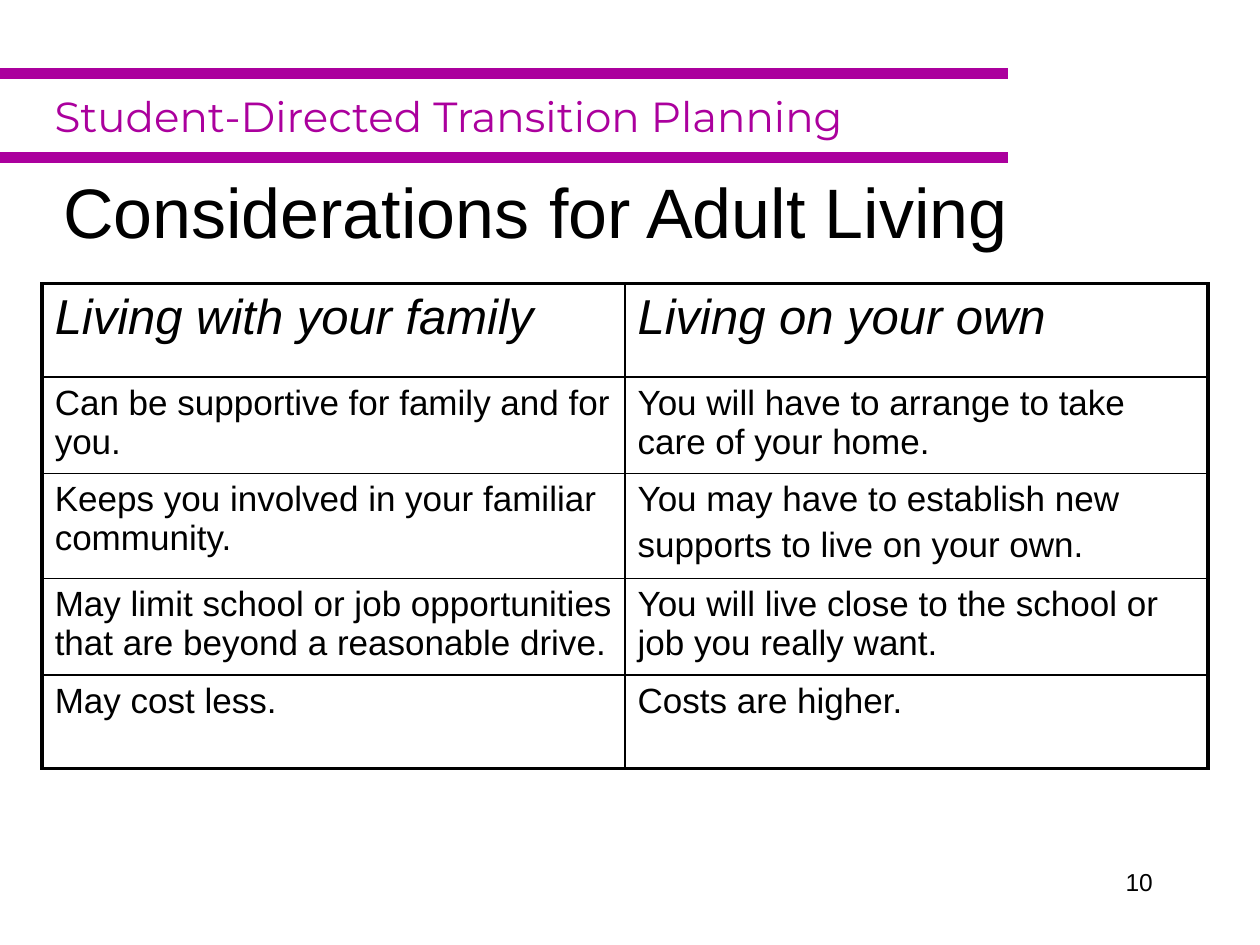
from lxml.etree import SubElement
from pptx import Presentation
from pptx.dml.color import RGBColor
from pptx.enum.shapes import MSO_CONNECTOR
from pptx.enum.text import MSO_ANCHOR, PP_ALIGN
from pptx.oxml.ns import qn
from pptx.util import Cm, Pt

# Content
BANNER = "Student-Directed Transition Planning"
TITLE = "Considerations for Adult Living"
PAGE_NUMBER = "10"
ROWS = [  # each cell is a list of paragraphs
    (["Living with your family"], ["Living on your own"]),
    (["Can be supportive for family and for you."],
     ["You will have to arrange to take care of your home."]),
    (["Keeps you involved in your familiar community."],
     ["You may have to establish new", "supports to live on your own."]),
    (["May limit school or job opportunities that are beyond a reasonable drive."],
     ["You will live close to the school or job you really want."]),
    (["May cost less."], ["Costs are higher."]),
]

# Layout in centimetres, line widths in points
COLORS = {"purple": "AB009D", "black": "000000"}
RULE_TOPS = (1.48, 3.18)
RULE_LENGTH = 20.32
TABLE_LEFT, TABLE_TOP = 0.85, 5.72
COLUMN_WIDTH = 11.75
ROW_HEIGHTS = (1.88, 1.95, 2.11, 1.95, 1.88)
OUTER, INNER = 2.25, 1


def style(paragraph, size, font="Arial", color="black", italic=False):
    paragraph.font.size = Pt(size)
    paragraph.font.name = font
    paragraph.font.italic = italic
    paragraph.font.color.rgb = RGBColor.from_string(COLORS[color])


def add_text(page, text, left, top, width, height, size, align=PP_ALIGN.LEFT,
             wrap=True, **look):
    box = page.shapes.add_textbox(Cm(left), Cm(top), Cm(width), Cm(height))
    box.text_frame.word_wrap = wrap
    paragraph = box.text_frame.paragraphs[0]
    paragraph.text = text
    paragraph.alignment = align
    style(paragraph, size, **look)
    return box


def add_rule(page, top):
    rule = page.shapes.add_connector(
        MSO_CONNECTOR.STRAIGHT, 0, Cm(top), Cm(RULE_LENGTH), Cm(top))
    rule.line.width = Pt(6)
    rule.line.color.rgb = RGBColor.from_string(COLORS["purple"])
    SubElement(rule._element.spPr, qn("a:effectLst"))


def set_borders(cell, widths):
    properties = cell._tc.get_or_add_tcPr()
    for side, width in widths.items():
        border = SubElement(properties, qn(f"a:ln{side}"), w=str(Pt(width)))
        fill = SubElement(border, qn("a:solidFill"))
        SubElement(fill, qn("a:srgbClr"), val=COLORS["black"])


def fill_cell(cell, texts, size, italic):
    frame = cell.text_frame
    for index, text in enumerate(texts):
        paragraph = frame.add_paragraph() if index else frame.paragraphs[0]
        paragraph.text = text
        if index:
            paragraph.space_before = Pt(0.2 * size)
        style(paragraph, size, italic=italic)


def add_comparison(page):
    last_row, last_column = len(ROWS) - 1, len(ROWS[0]) - 1
    table = page.shapes.add_table(
        len(ROWS), len(ROWS[0]), Cm(TABLE_LEFT), Cm(TABLE_TOP),
        Cm(COLUMN_WIDTH * len(ROWS[0])), Cm(sum(ROW_HEIGHTS))).table
    table.first_row = table.horz_banding = False
    for column in table.columns:
        column.width = Cm(COLUMN_WIDTH)
    for r, (texts_in_row, height) in enumerate(zip(ROWS, ROW_HEIGHTS)):
        table.rows[r].height = Cm(height)
        for c, texts in enumerate(texts_in_row):
            cell = table.cell(r, c)
            fill_cell(cell, texts, size=20 if r else 28, italic=r == 0)
            set_borders(cell, {
                "L": INNER if c else OUTER,
                "R": OUTER if c == last_column else INNER,
                "T": INNER if r else OUTER,
                "B": OUTER if r == last_row else INNER,
            })
            cell.fill.background()


def main():
    deck = Presentation()
    deck.slide_width, deck.slide_height = Cm(25.4), Cm(19.05)
    page = deck.slides.add_slide(deck.slide_layouts[6])

    # Banner between two rules
    for top in RULE_TOPS:
        add_rule(page, top)
    add_text(page, BANNER, 0.85, 1.69, 17.64, 1.28, 24, wrap=False,
             font="Montserrat", color="purple")

    # Title, table and page number
    title = add_text(page, TITLE, 0, 3.18, 21.59, 2.33, 40, PP_ALIGN.CENTER)
    title.text_frame.vertical_anchor = MSO_ANCHOR.MIDDLE
    title.text_frame.paragraphs[0].line_spacing = 0.9
    add_comparison(page)
    add_text(page, PAGE_NUMBER, 18.2, 17.36, 5.29, 1.27, 14, PP_ALIGN.RIGHT)

    deck.save("out.pptx")


if __name__ == "__main__":
    main()
